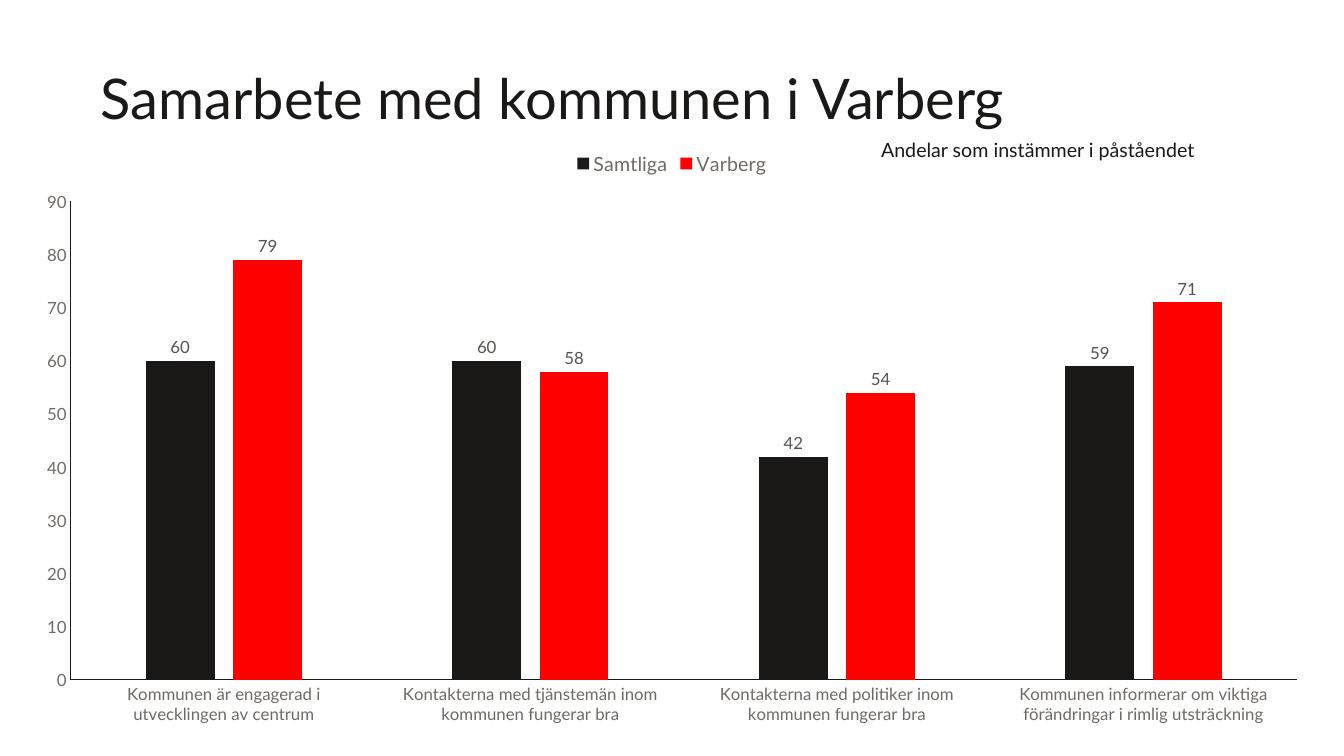
from pptx import Presentation
from pptx import util as u
from pptx.chart import data
from pptx.dml.color import RGBColor
from pptx.enum import chart as ch, text

INK = RGBColor(0x1A, 0x19, 0x18)
RED = RGBColor(0xFF, 0x00, 0x00)
GREY = RGBColor(0x6E, 0x6A, 0x65)
DARK = RGBColor(0x56, 0x52, 0x4F)


def style(font, size, color):
    font.name = "Lato"
    font.size = u.Pt(size)
    font.bold = False
    font.color.rgb = color


deck = Presentation()
deck.slide_width = u.Inches(13.33)
deck.slide_height = u.Inches(7.5)
slide = deck.slides.add_slide(deck.slide_layouts[6])

# Chart data
table = data.CategoryChartData(number_format="0")
table.categories = [
    "Kommunen är engagerad i utvecklingen av centrum",
    "Kontakterna med tjänstemän inom kommunen fungerar bra",
    "Kontakterna med politiker inom kommunen fungerar bra",
    "Kommunen informerar om viktiga förändringar i rimlig utsträckning",
]
table.add_series("Samtliga", (60, 60, 42, 59))
table.add_series("Varberg", (79, 58, 54, 71))

# Column chart
frame = slide.shapes.add_chart(
    ch.XL_CHART_TYPE.COLUMN_CLUSTERED, u.Inches(0.21), u.Inches(1.39),
    u.Inches(12.91), u.Inches(5.91), table)
chart = frame.chart
style(chart.font, 10, INK)
chart.has_title = False
chart.has_legend = True
chart.legend.position = ch.XL_LEGEND_POSITION.TOP
chart.legend.include_in_layout = False
style(chart.legend.font, 14, GREY)

# Axes
for axis in (chart.category_axis, chart.value_axis):
    axis.has_major_gridlines = False
    axis.major_tick_mark = ch.XL_TICK_MARK.NONE
    axis.minor_tick_mark = ch.XL_TICK_MARK.NONE
    axis.format.line.color.rgb = INK
    axis.format.line.width = u.Pt(0.75)
    style(axis.tick_labels.font, 12, GREY)
scale = chart.value_axis
scale.minimum_scale, scale.maximum_scale, scale.major_unit = 0, 90, 10

# Bars and their values
plot = chart.plots[0]
plot.gap_width = 219
plot.overlap = -27
plot.vary_by_categories = False
for bars, color in zip(plot.series, (INK, RED)):
    bars.format.fill.solid()
    bars.format.fill.fore_color.rgb = color
    bars.invert_if_negative = False
    tags = bars.data_labels
    tags.show_value = True
    tags.number_format = "0"
    tags.number_format_is_linked = False
    tags.position = ch.XL_LABEL_POSITION.OUTSIDE_END
    style(tags.font, 12, DARK)

# Title and note
TOP, LOW = text.MSO_ANCHOR.TOP, text.MSO_ANCHOR.BOTTOM
for words, place, size, space, anchor, pad in (
    ("Samarbete med kommunen i Varberg", (1, 0.13, 11.02, 1.16),
     40, 0.8, LOW, (0, 0)),
    ("Andelar som instämmer i påståendet", (8.64, 1.32, 4.33, 0.34),
     14, 1, TOP, (0.1, 0.05)),
):
    box = slide.shapes.add_textbox(*map(u.Inches, place)).text_frame
    form = {
        "word_wrap": True,
        "vertical_anchor": anchor,
        "margin_left": u.Inches(pad[0]),
        "margin_right": u.Inches(pad[0]),
        "margin_top": u.Inches(pad[1]),
        "margin_bottom": u.Inches(pad[1]),
    }
    for key, value in form.items():
        setattr(box, key, value)
    line = box.paragraphs[0]
    line.line_spacing = space
    run = line.add_run()
    run.text = words
    style(run.font, size, INK)

deck.save("out.pptx")
